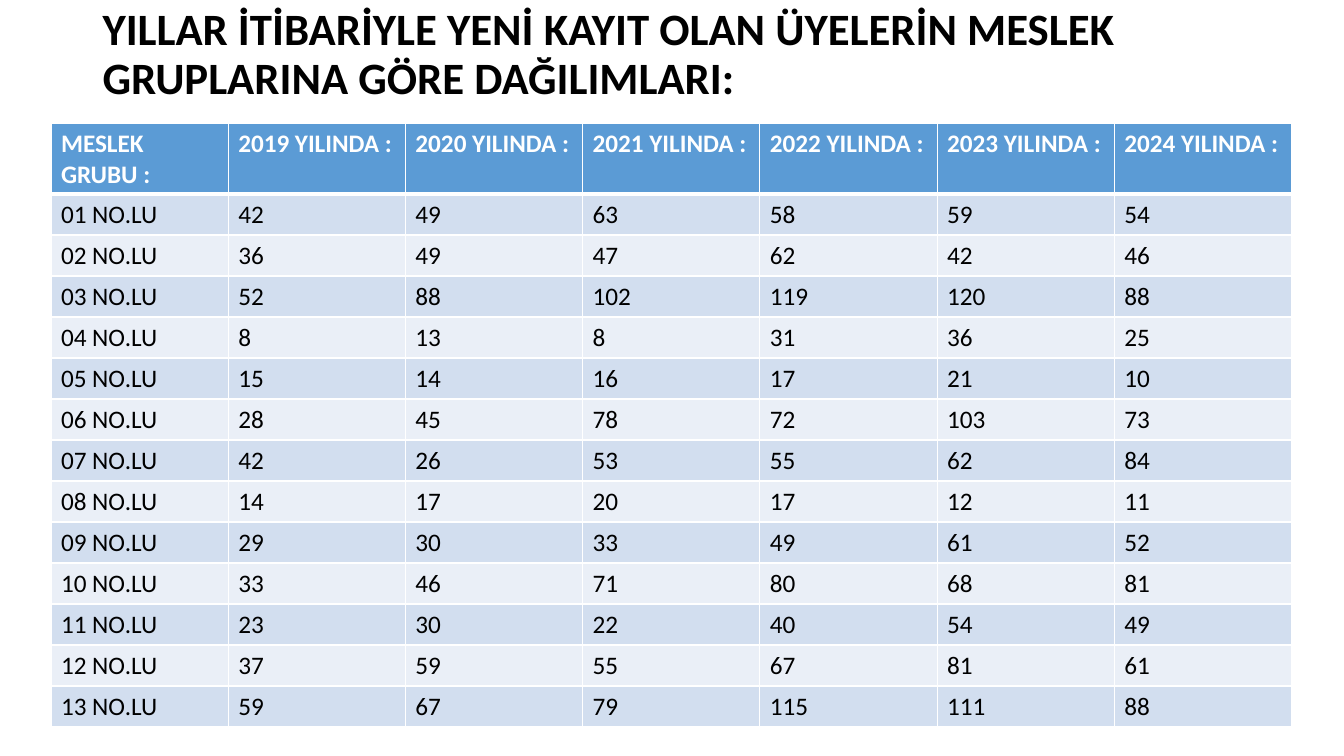
from typing import NamedTuple

from lxml import etree
from pptx import Presentation
from pptx.dml.color import RGBColor
from pptx.enum import text
from pptx.oxml import ns
from pptx.util import Pt

COLORS = {
    "white": "FFFFFF",
    "black": "000000",
    "header": "5B9BD5",
    "odd_row": "D2DEEF",
    "even_row": "EAEFF7",
}
FONT = "Calibri"
TITLE = "YILLAR İTİBARİYLE YENİ KAYIT OLAN ÜYELERİN MESLEK GRUPLARINA GÖRE DAĞILIMLARI:"
YEARS = range(2019, 2025)
TABLE_LEFT, TABLE_TOP = 36.4, 88.2
COLUMN_WIDTH, HEADER_HEIGHT, ROW_HEIGHT = 126.6, 50.4, 29.3
THIN, THICK = 1, 3

# New members per year, one line for each occupational group
MEMBERS = [
    (42, 49, 63, 58, 59, 54),
    (36, 49, 47, 62, 42, 46),
    (52, 88, 102, 119, 120, 88),
    (8, 13, 8, 31, 36, 25),
    (15, 14, 16, 17, 21, 10),
    (28, 45, 78, 72, 103, 73),
    (42, 26, 53, 55, 62, 84),
    (14, 17, 20, 17, 12, 11),
    (29, 30, 33, 49, 61, 52),
    (33, 46, 71, 80, 68, 81),
    (23, 30, 22, 40, 54, 49),
    (37, 59, 55, 67, 81, 61),
    (59, 67, 79, 115, 111, 88),
]


class TableRow(NamedTuple):
    texts: list[str]
    height: float
    fill: str
    color: str = "black"
    bold: bool = False
    top_border: float = THIN
    bottom_border: float = THIN


def write_text(frame, content: str, *, size: float, color: str,
               bold: bool = False, line_spacing: float = 1.0) -> None:
    paragraph = frame.paragraphs[0]
    paragraph.line_spacing = line_spacing
    run = paragraph.add_run()
    run.text = content
    run.font.name = FONT
    run.font.size = Pt(size)
    run.font.bold = bold
    run.font.color.rgb = RGBColor.from_string(COLORS[color])


def add_border(cell, side: str, width: float) -> None:
    """Add a white line on one side: L, R, T or B, in that order."""
    properties = cell._tc.get_or_add_tcPr()
    line = etree.SubElement(properties, ns.qn(f"a:ln{side}"), w=str(Pt(width)))
    fill = etree.SubElement(line, ns.qn("a:solidFill"))
    etree.SubElement(fill, ns.qn("a:srgbClr"), val=COLORS["white"])


def build_rows() -> list[TableRow]:
    header = TableRow(
        ["MESLEK GRUBU :"] + [f"{year} YILINDA :" for year in YEARS],
        HEADER_HEIGHT, "header", "white", bold=True, bottom_border=THICK)
    groups = [
        TableRow(
            [f"{number:02} NO.LU"] + [str(count) for count in counts],
            ROW_HEIGHT, "odd_row" if number % 2 else "even_row",
            top_border=THICK if number == 1 else THIN)
        for number, counts in enumerate(MEMBERS, start=1)
    ]
    return [header] + groups


def draw_cell(cell, content: str, row: TableRow) -> None:
    borders = {"L": THIN, "R": THIN, "T": row.top_border, "B": row.bottom_border}
    for side, width in borders.items():
        add_border(cell, side, width)
    cell.fill.solid()
    cell.fill.fore_color.rgb = RGBColor.from_string(COLORS[row.fill])
    write_text(cell.text_frame, content, size=18, color=row.color, bold=row.bold)


def draw_table(slide, rows: list[TableRow]) -> None:
    column_count = len(rows[0].texts)
    table = slide.shapes.add_table(
        len(rows), column_count, Pt(TABLE_LEFT), Pt(TABLE_TOP),
        Pt(COLUMN_WIDTH * column_count), Pt(sum(row.height for row in rows))).table
    for column in table.columns:
        column.width = Pt(COLUMN_WIDTH)
    for row_index, row in enumerate(rows):
        table.rows[row_index].height = Pt(row.height)
        for column_index, content in enumerate(row.texts):
            draw_cell(table.cell(row_index, column_index), content, row)


def draw_title(slide) -> None:
    shape = slide.shapes.add_textbox(Pt(66.2), Pt(0), Pt(828), Pt(79.2))
    frame = shape.text_frame
    frame.word_wrap = True
    frame.vertical_anchor = text.MSO_ANCHOR.MIDDLE
    write_text(frame, TITLE, size=32, color="black", bold=True, line_spacing=0.9)


def main() -> None:
    presentation = Presentation()
    presentation.slide_width, presentation.slide_height = Pt(960), Pt(540)
    slide = presentation.slides.add_slide(presentation.slide_layouts[6])
    slide.background.fill.solid()
    slide.background.fill.fore_color.rgb = RGBColor.from_string(COLORS["white"])
    draw_title(slide)
    draw_table(slide, build_rows())
    presentation.save("out.pptx")


if __name__ == "__main__":
    main()
